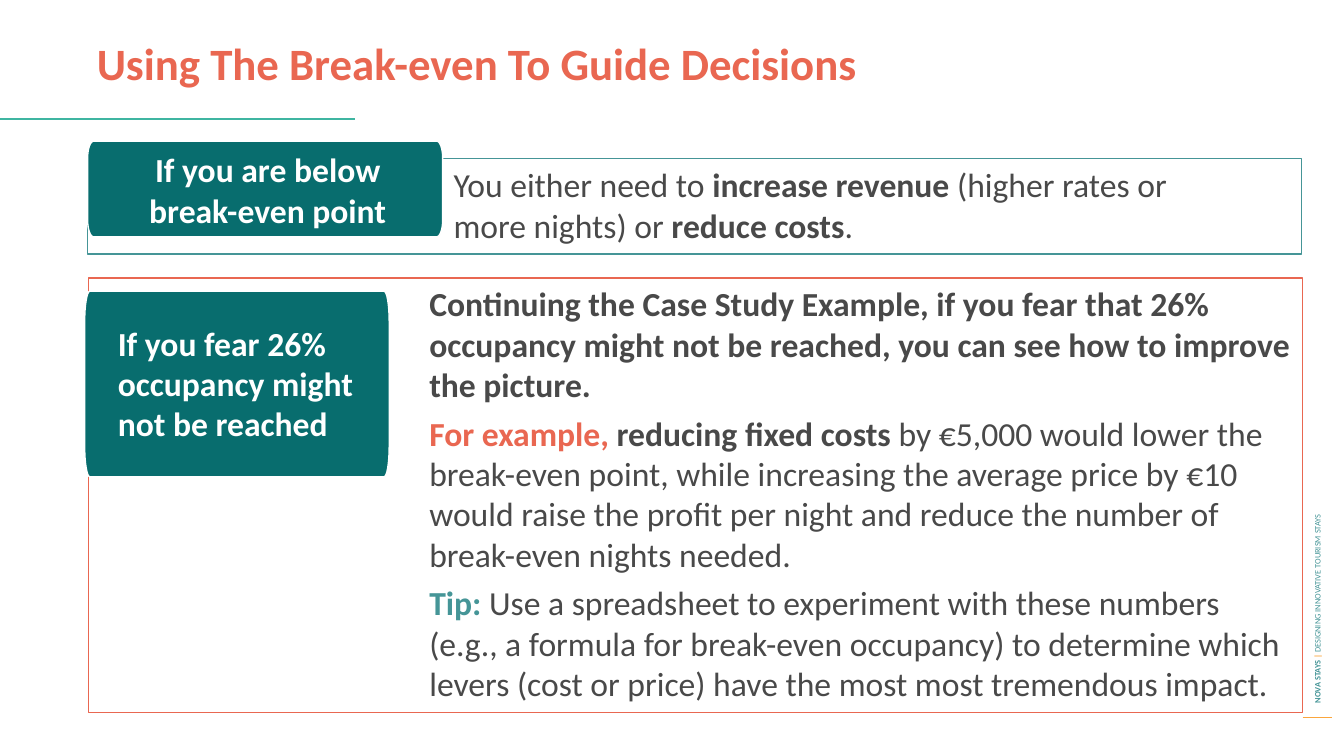
from dataclasses import dataclass
from math import cos, pi, sin

from lxml import etree
from pptx import Presentation
from pptx.dml.color import RGBColor
from pptx.enum.shapes import MSO_CONNECTOR, MSO_SHAPE
from pptx.enum.text import MSO_ANCHOR, MSO_AUTO_SIZE, PP_ALIGN
from pptx.oxml.ns import qn
from pptx.util import Inches, Pt

LEFT, CENTER = PP_ALIGN.LEFT, PP_ALIGN.CENTER
TOP, MIDDLE = MSO_ANCHOR.TOP, MSO_ANCHOR.MIDDLE
NO_AUTOFIT = MSO_AUTO_SIZE.NONE
STRAIGHT = MSO_CONNECTOR.STRAIGHT
RECTANGLE = MSO_SHAPE.RECTANGLE

FONT = "Calibri"
CORAL, TEAL, DARK_TEAL, MINT = "E96751", "459597", "086D6E", "3FB5A1"
AMBER, GREY, WHITE = "FBA63B", "494949", "FFFFFF"
TITLE_ONLY_LAYOUT = 5
CORNER_STEPS = 8


@dataclass
class Box:
    left: float
    top: float
    width: float
    height: float

    def lengths(self):
        return [Inches(v) for v in (self.left, self.top, self.width, self.height)]


@dataclass
class Run:
    text: str
    color: str = GREY
    bold: bool = False


@dataclass
class Section:
    """A framed panel with a label tab on the left and body text on the right."""
    panel: Box
    panel_line: str
    tab: Box
    corner_width: float
    corner_height: float
    label_box: Box
    label: str
    label_alignment: PP_ALIGN
    body_box: Box
    body: list[list[Run]]
    space_after: float = 0


@dataclass
class Rule:
    left: float
    right: float
    top: float
    color: str
    weight: float


SECTIONS = [
    Section(
        panel=Box(0.87, 1.57, 12.04, 0.95), panel_line=TEAL,
        tab=Box(0.87, 1.4, 3.52, 0.95), corner_width=0.06, corner_height=0.16,
        label_box=Box(1.01, 1.43, 3.29, 0.91),
        label="If you are below break-even point", label_alignment=CENTER,
        body_box=Box(4.4, 1.58, 8.06, 0.91),
        body=[[
            Run("You either need to "),
            Run("increase revenue", bold=True),
            Run(" (higher rates or more nights) or "),
            Run("reduce costs", bold=True),
            Run("."),
        ]],
    ),
    Section(
        panel=Box(0.88, 2.76, 12.04, 4.31), panel_line=CORAL,
        tab=Box(0.84, 2.89, 3.02, 1.84), corner_width=0.05, corner_height=0.3,
        label_box=Box(1.07, 3.15, 2.56, 1.31),
        label="If you fear 26% occupancy might not be reached", label_alignment=LEFT,
        body_box=Box(4.16, 2.76, 8.76, 4.31),
        body=[
            [Run("Continuing the Case Study Example, if you fear that 26% occupancy "
                 "might not be reached, you can see how to improve the picture.", bold=True)],
            [Run("For example, ", CORAL, True),
             Run("reducing fixed costs ", bold=True),
             Run("by €5,000 would lower the break-even point, while increasing the "
                 "average price by €10 would raise the profit per night and reduce "
                 "the number of break-even nights needed.")],
            [Run("Tip: ", TEAL, True),
             Run("Use a spreadsheet to experiment with these numbers (e.g., a formula "
                 "for break-even occupancy) to determine which levers (cost or price) "
                 "have the most most tremendous impact.")],
        ],
        space_after=6,
    ),
]

RULES = [
    Rule(12.92, 13.21, 7.12, "FBA63D", 0.75),
    Rule(0, 3.52, 1.18, MINT, 1.5),
]


def rgb(color: str) -> RGBColor:
    return RGBColor.from_string(color)


def write_text(shape, paragraphs: list[list[Run]], size: float,
               alignment=LEFT, anchor=TOP, space_after: float = 0) -> None:
    frame = shape.text_frame
    frame.word_wrap = True
    frame.auto_size = NO_AUTOFIT
    frame.vertical_anchor = anchor
    for index, runs in enumerate(paragraphs):
        paragraph = frame.add_paragraph() if index else frame.paragraphs[0]
        paragraph.alignment = alignment
        paragraph.space_after = Pt(space_after)
        for item in runs:
            run = paragraph.add_run()
            run.text = item.text
            run.font.name = FONT
            run.font.size = Pt(size)
            run.font.bold = item.bold
            run.font.color.rgb = rgb(item.color)


def style_shape(shape, fill: str, line: str) -> None:
    shape.shadow.inherit = False
    shape.fill.solid()
    shape.fill.fore_color.rgb = rgb(fill)
    shape.line.color.rgb = rgb(line)
    shape.line.width = Pt(1)


def add_rule(slide, rule: Rule) -> None:
    top = Inches(rule.top)
    connector = slide.shapes.add_connector(
        STRAIGHT, Inches(rule.left), top, Inches(rule.right), top)
    connector.line.color.rgb = rgb(rule.color)
    connector.line.width = Pt(rule.weight)
    etree.SubElement(connector.element.spPr, qn("a:effectLst"))


def add_panel(slide, box: Box, line: str) -> None:
    panel = slide.shapes.add_shape(RECTANGLE, *box.lengths())
    style_shape(panel, WHITE, line)
    white = panel.element.spPr.find(qn("a:solidFill"))[0]
    etree.SubElement(white, qn("a:alpha")).set("val", "90000")


def add_tab(slide, box: Box, corner_width: float, corner_height: float) -> None:
    """Draw a rectangle whose corners are quarter ellipses."""
    right, bottom = box.left + box.width, box.top + box.height
    inner_left, inner_right = box.left + corner_width, right - corner_width
    inner_top, inner_bottom = box.top + corner_height, bottom - corner_height
    centers = [(inner_right, inner_bottom), (inner_left, inner_bottom),
               (inner_left, inner_top), (inner_right, inner_top)]
    points = []
    for quarter, (x, y) in enumerate(centers):
        for step in range(CORNER_STEPS + 1):
            angle = (quarter + step / CORNER_STEPS) * pi / 2
            points.append((Inches(x + corner_width * cos(angle)),
                           Inches(y + corner_height * sin(angle))))
    builder = slide.shapes.build_freeform(*points[0])
    builder.add_line_segments(points[1:], close=True)
    style_shape(builder.convert_to_shape(), DARK_TEAL, WHITE)


def add_section(slide, section: Section) -> None:
    add_panel(slide, section.panel, section.panel_line)
    add_tab(slide, section.tab, section.corner_width, section.corner_height)
    label = slide.shapes.add_textbox(*section.label_box.lengths())
    write_text(label, [[Run(section.label, WHITE, True)]], 24, section.label_alignment)
    body = slide.shapes.add_textbox(*section.body_box.lengths())
    write_text(body, section.body, 24, space_after=section.space_after)


def add_side_label(slide) -> None:
    label = slide.shapes.add_textbox(*Box(10.18, 4.09, 5.77, 0.2).lengths())
    label.rotation = 270
    runs = [Run("NOVA STAYS ", TEAL, True), Run("| ", AMBER, True),
            Run("DESIGNING INNOVATIVE TOURISM STAYS", TEAL)]
    write_text(label, [runs], 6, anchor=MIDDLE)


def main() -> None:
    presentation = Presentation()
    presentation.slide_width, presentation.slide_height = Inches(13.33), Inches(7.5)
    slide = presentation.slides.add_slide(presentation.slide_layouts[TITLE_ONLY_LAYOUT])
    title = slide.shapes.title
    title.left, title.top, title.width, title.height = Box(0.86, 0.3, 11.61, 0.88).lengths()
    write_text(title, [[Run("Using The Break-even To Guide Decisions", CORAL, True)]], 32)
    for rule in RULES:
        add_rule(slide, rule)
    add_side_label(slide)
    for section in SECTIONS:
        add_section(slide, section)
    presentation.save("out.pptx")


if __name__ == "__main__":
    main()
